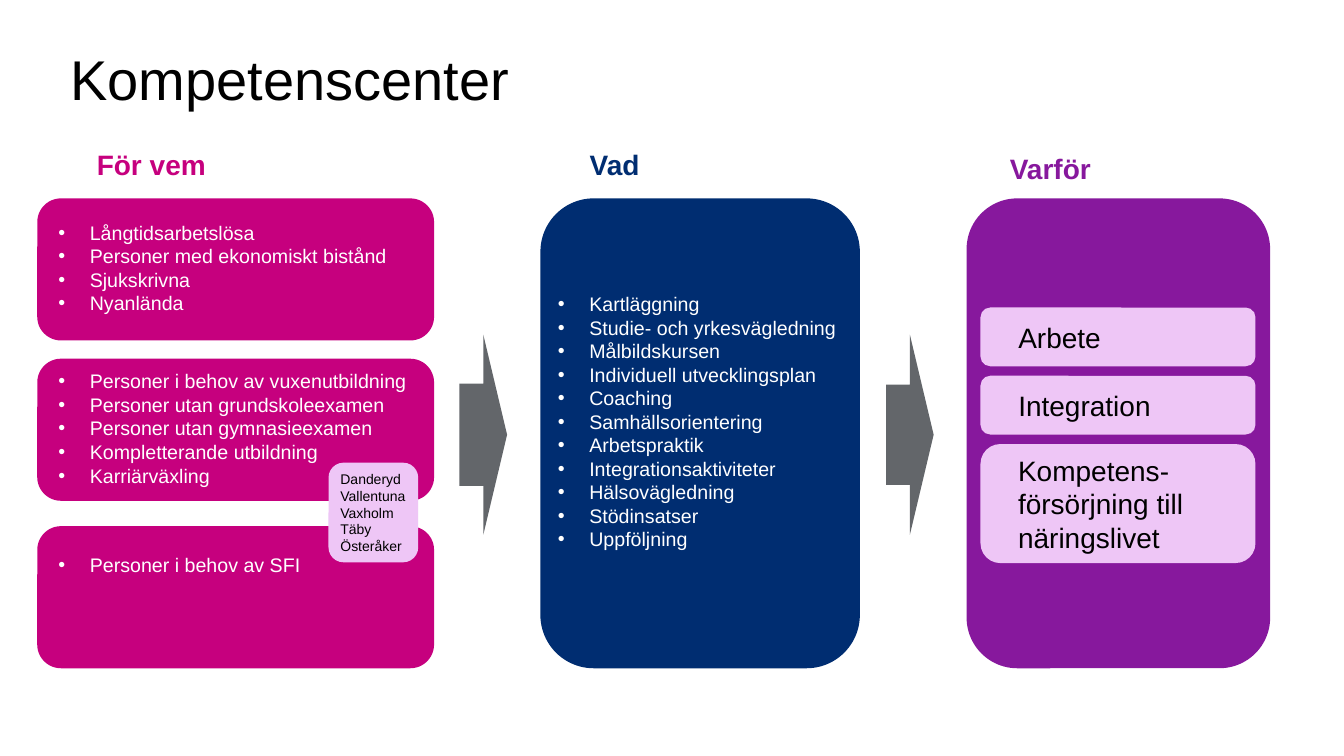
"""Build the Kompetenscenter slide: for whom, what and why."""
from pptx import Presentation
from pptx.dml.color import RGBColor
from pptx.enum.shapes import MSO_SHAPE
from pptx.enum.text import MSO_ANCHOR, PP_ALIGN
from pptx.oxml.ns import qn
from pptx.util import Cm, Pt
from lxml import etree

ROUNDED = MSO_SHAPE.ROUNDED_RECTANGLE
ARROW = MSO_SHAPE.RIGHT_ARROW
TOP, MIDDLE = MSO_ANCHOR.TOP, MSO_ANCHOR.MIDDLE
LEFT = PP_ALIGN.LEFT

FONT = "Arial"
COLORS = {
    "pink": "C6007E", "navy": "002D71", "purple": "87189D", "lilac": "EEC6F6",
    "gray": "63666A", "white": "FFFFFF", "black": "000000",
}

TITLE = "Kompetenscenter"
HEADINGS = [
    ("Vad", "navy", 14.61, 3.58, 1.78),
    ("För vem", "pink", 2.19, 3.58, 3.28),
    ("Varför", "purple", 25.2, 3.7, 2.57),
]
TARGET_GROUPS = [
    (5.0, MIDDLE, ["Långtidsarbetslösa", "Personer med ekonomiskt bistånd",
                   "Sjukskrivna", "Nyanlända"]),
    (9.04, MIDDLE, ["Personer i behov av vuxenutbildning", "Personer utan grundskoleexamen",
                    "Personer utan gymnasieexamen", "Kompletterande utbildning",
                    "Karriärväxling"]),
    (13.26, TOP, ["Personer i behov av SFI"]),
]
ACTIVITIES = [
    "Kartläggning", "Studie- och yrkesvägledning", "Målbildskursen",
    "Individuell utvecklingsplan", "Coaching", "Samhällsorientering", "Arbetspraktik",
    "Integrationsaktiviteter", "Hälsovägledning", "Stödinsatser", "Uppföljning",
]
MUNICIPALITIES = ["Danderyd", "Vallentuna", "Vaxholm", "Täby", "Österåker"]
GOALS = [("Arbete", 1.48), ("Integration", 1.48),
         ("Kompetens-försörjning till näringslivet", 3.0)]

PANEL_TOP, PANEL_HEIGHT = 5.0, 11.84
GROUP_HEIGHT = 3.58
GOAL_TOP, GOAL_GAP = 7.75, 0.24
ARROWS = [(11.58, 0.51), (22.33, 0.5)]
CORNER = 0.1667
CORNER_INSET = 0.29


def rgb(name):
    return RGBColor.from_string(COLORS[name])


def add_bullet(paragraph):
    properties = paragraph._p.get_or_add_pPr()
    properties.set("marL", str(Cm(0.79)))
    properties.set("indent", str(-Cm(0.79)))
    etree.SubElement(properties, qn("a:buFont")).set("typeface", FONT)
    etree.SubElement(properties, qn("a:buChar")).set("char", "•")


def write_lines(frame, lines, size, color, bold=False, bullets=False):
    for index, line in enumerate(lines):
        paragraph = frame.paragraphs[0] if index == 0 else frame.add_paragraph()
        paragraph.text = line
        paragraph.alignment = LEFT
        if bullets:
            add_bullet(paragraph)
        paragraph.font.name = FONT
        paragraph.font.size = Pt(size)
        paragraph.font.bold = bold
        paragraph.font.color.rgb = rgb(color)


def add_filled(slide, kind, left, top, width, height, color):
    shape = slide.shapes.add_shape(kind, Cm(left), Cm(top), Cm(width), Cm(height))
    shape.shadow.inherit = False
    shape.fill.solid()
    shape.fill.fore_color.rgb = rgb(color)
    shape.line.fill.background()
    return shape


def add_card(slide, left, top, width, height, fill, lines=(), size=14, color="white",
             text_offset=0.5, bullets=False, anchor=MIDDLE, margin_bottom=0):
    card = add_filled(slide, ROUNDED, left, top, width, height, fill)
    frame = card.text_frame
    frame.word_wrap = True
    frame.vertical_anchor = anchor
    inset = CORNER_INSET * CORNER * min(width, height)
    frame.margin_left = Cm(round(text_offset - inset, 2))
    frame.margin_top = Cm(0.51 if anchor == TOP else 0)
    frame.margin_right = 0
    frame.margin_bottom = Cm(margin_bottom)
    write_lines(frame, lines, size, color, bullets=bullets)


def main():
    presentation = Presentation()
    presentation.slide_width, presentation.slide_height = Cm(33.87), Cm(19.05)
    slide = presentation.slides.add_slide(presentation.slide_layouts[5])

    title = slide.shapes.title
    title.left, title.top, title.width, title.height = Cm(1.52), Cm(1.15), Cm(20.17), Cm(1.85)
    title.text_frame.vertical_anchor = MIDDLE
    write_lines(title.text_frame, [TITLE], 40, "black")
    title.text_frame.paragraphs[0].line_spacing = 0.9

    for text, color, left, top, width in HEADINGS:
        heading = slide.shapes.add_textbox(Cm(left), Cm(top), Cm(width), Cm(1.12))
        heading.text_frame.word_wrap = False
        write_lines(heading.text_frame, [text], 20, color, bold=True)

    for top, anchor, lines in TARGET_GROUPS:
        add_card(slide, 0.94, top, 10, GROUP_HEIGHT, "pink", lines, text_offset=0.53,
                 bullets=True, anchor=anchor, margin_bottom=0.08)
    add_card(slide, 8.28, 11.66, 2.26, 2.51, "lilac", MUNICIPALITIES, 10, "black",
             text_offset=0.3)

    add_card(slide, 13.62, PANEL_TOP, 8.05, PANEL_HEIGHT, "navy", ACTIVITIES,
             text_offset=0.44, bullets=True, margin_bottom=0.6)

    add_card(slide, 24.36, PANEL_TOP, 7.65, PANEL_HEIGHT, "purple")
    top = GOAL_TOP
    for goal, height in GOALS:
        add_card(slide, 24.71, top, 6.93, height, "lilac", [goal], 20, "black",
                 text_offset=0.95)
        top += height + GOAL_GAP

    for left, shaft in ARROWS:
        arrow = add_filled(slide, ARROW, left, 8.43, 1.2, 5.05, "gray")
        arrow.adjustments[0] = shaft

    presentation.save("out.pptx")


if __name__ == "__main__":
    main()
